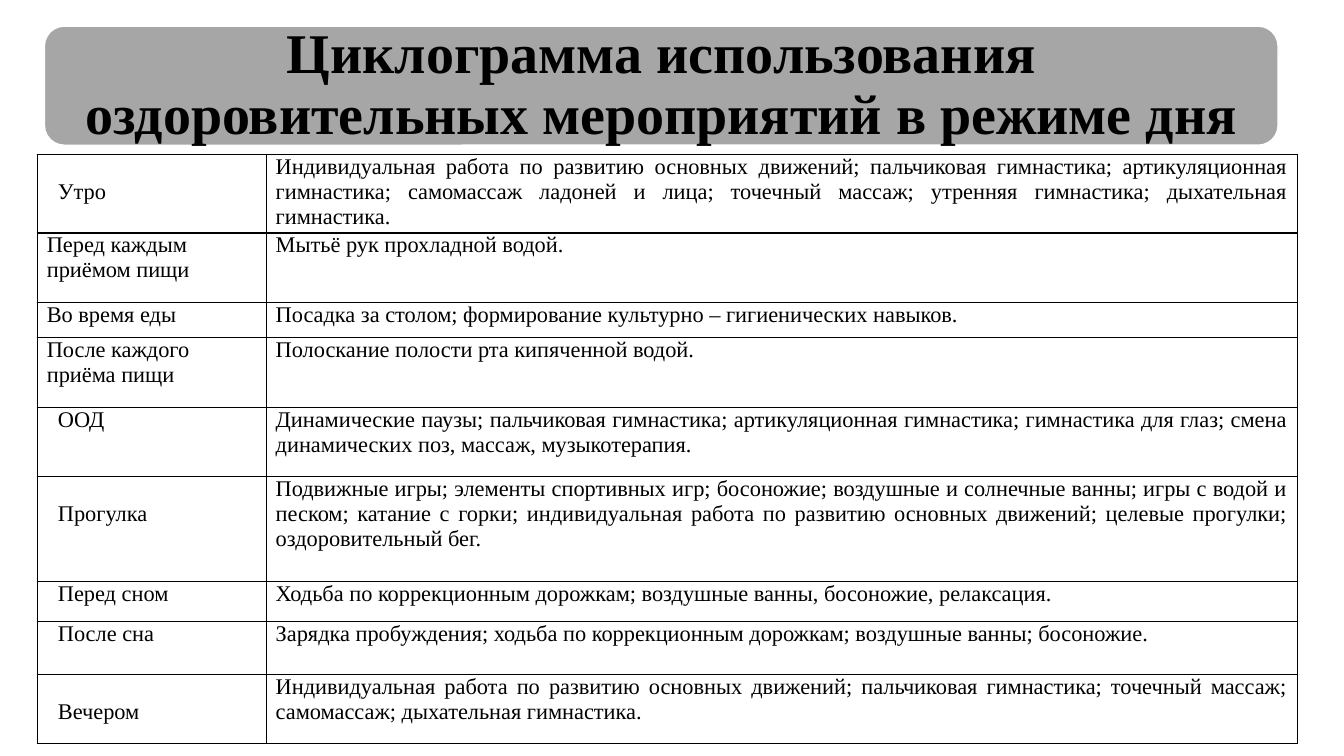
import lxml.etree
import pptx
import pptx.dml.color
import pptx.enum.shapes
import pptx.enum.text
import pptx.oxml.ns
import pptx.util

Cm = pptx.util.Cm
Pt = pptx.util.Pt
Align = pptx.enum.text.PP_ALIGN
Anchor = pptx.enum.text.MSO_ANCHOR

TITLE = "Циклограмма использования оздоровительных мероприятий в режиме дня"
COLUMN_WIDTHS = (5.77, 25.98)
INDENT = 0.28
ONE_LINE = 0.63
ROUTINE = [
    (1.98, "Утро", INDENT, ONE_LINE,
     "Индивидуальная работа по развитию основных движений; пальчиковая гимнастика; "
     "артикуляционная гимнастика; самомассаж ладоней и лица; точечный массаж; "
     "утренняя гимнастика; дыхательная гимнастика."),
    (1.75, "Перед каждым приёмом пищи", 0, 0, "Мытьё рук прохладной водой."),
    (0.89, "Во время еды", 0, 0,
     "Посадка за столом; формирование культурно – гигиенических навыков."),
    (1.75, "После каждого приёма пищи", 0, 0, "Полоскание полости рта кипяченной водой."),
    (1.75, "ООД", INDENT, 0,
     "Динамические паузы; пальчиковая гимнастика; артикуляционная гимнастика; "
     "гимнастика для глаз; смена динамических поз, массаж, музыкотерапия."),
    (2.64, "Прогулка", INDENT, ONE_LINE,
     "Подвижные игры; элементы спортивных игр; босоножие; воздушные и солнечные ванны; "
     "игры с водой и песком; катание с горки; индивидуальная работа по развитию "
     "основных движений; целевые прогулки; оздоровительный бег."),
    (1.02, "Перед сном", INDENT, 0,
     "Ходьба по коррекционным дорожкам; воздушные ванны, босоножие, релаксация."),
    (1.32, "После сна", INDENT, 0,
     "Зарядка пробуждения; ходьба по коррекционным дорожкам; воздушные ванны; босоножие."),
    (1.75, "Вечером", INDENT, ONE_LINE,
     "Индивидуальная работа по развитию основных движений; пальчиковая гимнастика; "
     "точечный массаж; самомассаж; дыхательная гимнастика."),
]


def color(value):
    return pptx.dml.color.RGBColor.from_string(value)


class RoutineSlide:
    font = "Times New Roman"
    ink = "000000"
    banner_fill = "A6A6A6"
    banner_line = "FFFFFF"
    side_margin = 0.24

    def __init__(self, page):
        self.page = page

    def text(self, frame, words, size, align, bold=False):
        frame.text = words
        para = frame.paragraphs[0]
        para.alignment = align
        for span in para.runs:
            span.font.name = self.font
            span.font.size = Pt(size)
            span.font.bold = bold
            span.font.color.rgb = color(self.ink)
        return para

    def banner(self, words, left, top, width, height):
        box = self.page.shapes.add_shape(
            pptx.enum.shapes.MSO_SHAPE.ROUNDED_RECTANGLE,
            Cm(left), Cm(top), Cm(width), Cm(height))
        box.shadow.inherit = False
        box.fill.solid()
        box.fill.fore_color.rgb = color(self.banner_fill)
        box.line.color.rgb = color(self.banner_line)
        box.line.width = Pt(1)
        frame = box.text_frame
        frame.word_wrap = True
        frame.vertical_anchor = Anchor.MIDDLE
        frame.margin_left = frame.margin_right = Cm(0.43)
        frame.margin_top = frame.margin_bottom = Cm(0.43)
        para = self.text(frame, words, 40, Align.CENTER, bold=True)
        para.line_spacing = 0.9

    def border(self, cell):
        properties = cell._tc.get_or_add_tcPr()
        qn = pptx.oxml.ns.qn
        for side in ("a:lnL", "a:lnR", "a:lnT", "a:lnB"):
            line = lxml.etree.SubElement(properties, qn(side), w=str(Pt(1)))
            fill = lxml.etree.SubElement(line, qn("a:solidFill"))
            lxml.etree.SubElement(fill, qn("a:srgbClr"), val=self.ink)

    def cell(self, cell, words, align, indent=0, drop=0):
        self.border(cell)
        cell.fill.background()
        cell.vertical_anchor = Anchor.TOP
        cell.margin_left = Cm(self.side_margin + indent)
        cell.margin_right = Cm(self.side_margin)
        cell.margin_top = Cm(drop)
        cell.margin_bottom = 0
        self.text(cell.text_frame, words, 16, align)

    def table(self, entries, widths, left, top):
        height = sum(entry[0] for entry in entries)
        table = self.page.shapes.add_table(
            len(entries), len(widths), Cm(left), Cm(top),
            Cm(sum(widths)), Cm(height)).table
        table.first_row = False
        table.horz_banding = False
        for column, width in zip(table.columns, widths):
            column.width = Cm(width)
        for index, (height, moment, indent, drop, activities) in enumerate(entries):
            table.rows[index].height = Cm(height)
            self.cell(table.cell(index, 0), moment, Align.LEFT, indent, drop)
            self.cell(table.cell(index, 1), activities, Align.JUSTIFY)


def main():
    deck = pptx.Presentation()
    deck.slide_width = Cm(33.87)
    deck.slide_height = Cm(19.05)
    routine = RoutineSlide(deck.slides.add_slide(deck.slide_layouts[6]))
    routine.banner(TITLE, 1.12, 0.66, 31.09, 3)
    routine.table(ROUTINE, COLUMN_WIDTHS, 0.94, 3.89)
    deck.save("out.pptx")


if __name__ == "__main__":
    main()
